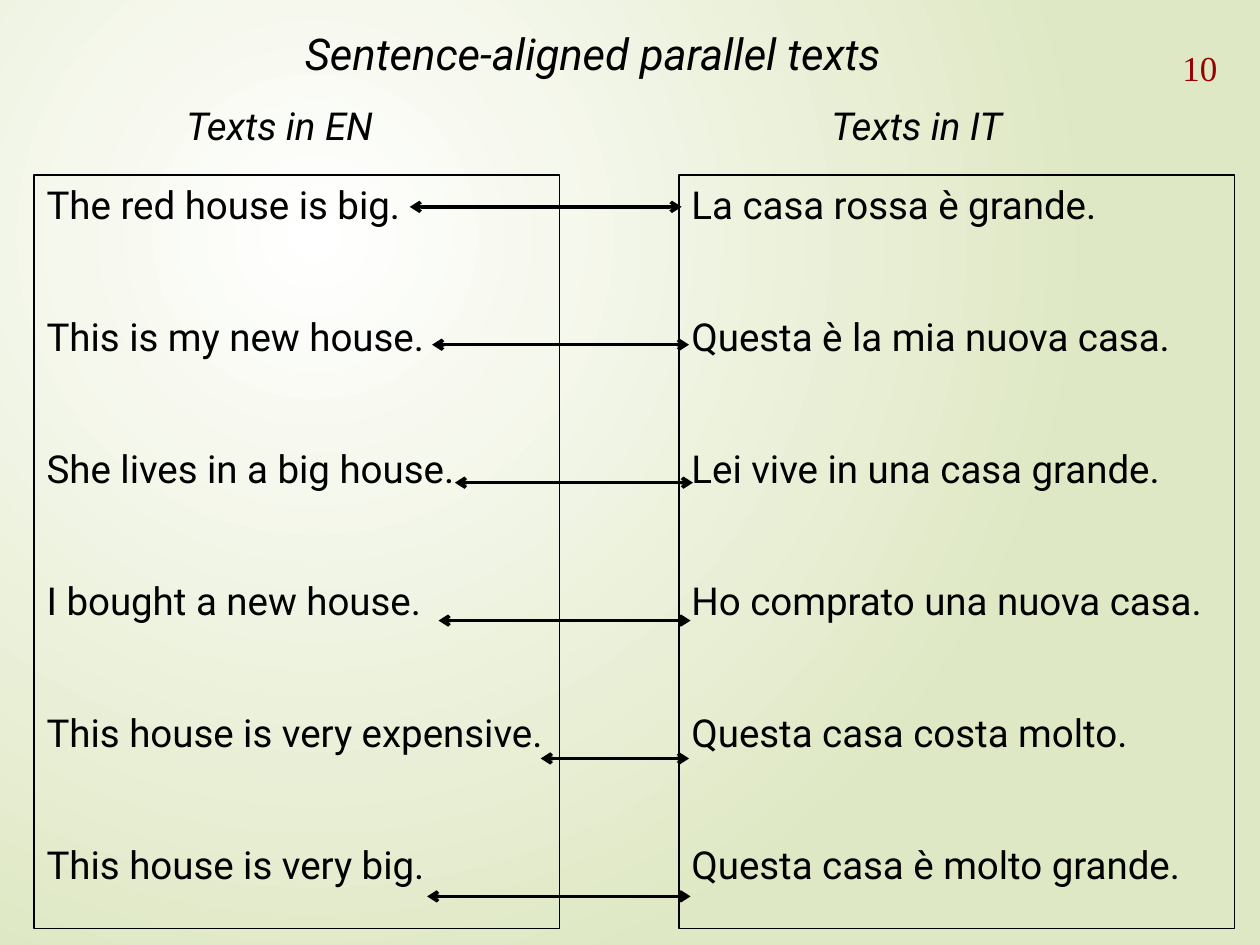
from dataclasses import dataclass

from lxml import etree
from pptx import Presentation
from pptx.dml.color import RGBColor
from pptx.enum.shapes import MSO_CONNECTOR, MSO_SHAPE
from pptx.enum.text import MSO_ANCHOR, PP_ALIGN
from pptx.oxml.ns import qn
from pptx.util import Cm, Pt


@dataclass(frozen=True)
class Theme:
    ink: RGBColor = RGBColor(0, 0, 0)
    number: RGBColor = RGBColor(0x99, 0, 0)
    center: RGBColor = RGBColor(0xFF, 0xFF, 0xFF)
    edge: RGBColor = RGBColor(0xDF, 0xE8, 0xC4)
    font: str = "Roboto"
    number_font: str = "Times New Roman"
    title_size: int = 25
    body_size: int = 22
    number_size: int = 20
    sentence_gap: int = 49


THEME = Theme()
BOX_TOP, BOX_HEIGHT = 3.53, 15.19
HEADING_TOP, HEADING_WIDTH, HEADING_HEIGHT = 1.93, 4.6, 1.19
ARROW_TOP, ARROW_PITCH = 4.17, 2.78

# heading, heading left, box left, box width, sentences
COLUMNS = [
    ("Texts in EN", 3.51, 0.69, 10.59, [
        "The red house is big.",
        "This is my new house.",
        "She lives in a big house.",
        "I bought a new house.",
        "This house is very expensive.",
        "This house is very big.",
    ]),
    ("Texts in IT", 16.51, 13.69, 11.2, [
        "La casa rossa è grande.",
        "Questa è la mia nuova casa.",
        "Lei vive in una casa grande.",
        "Ho comprato una nuova casa.",
        "Questa casa costa molto.",
        "Questa casa è molto grande.",
    ]),
]
ARROW_SPANS = [(8.26, 13.74), (8.71, 13.89), (9.17, 13.97),
               (8.84, 13.92), (10.9, 13.89), (8.61, 13.92)]


def paint_background(s):
    """Radial gradient centred a quarter of the way in from the top left."""
    fill = s.background.fill
    fill.gradient()
    for stop, color in zip(fill.gradient_stops, (THEME.center, THEME.edge)):
        stop.color.rgb = color
    grad = s.element.xpath(".//p:bg//a:gradFill")[0]
    grad.remove(grad.find(qn("a:lin")))
    circle = etree.SubElement(grad, qn("a:path"), path="circle")
    etree.SubElement(circle, qn("a:fillToRect"),
                     l="50000", t="50000", r="100000", b="100000")


def write(tf, lines, size, color=THEME.ink, font=THEME.font, italic=False,
          align=PP_ALIGN.LEFT, gap=0):
    tf.word_wrap = True
    for i, line in enumerate(lines):
        p = tf.add_paragraph() if i else tf.paragraphs[0]
        p.text = line
        p.alignment = align
        p.space_before = Pt(0)
        p.space_after = Pt(gap)
        p.font.name = font
        p.font.size = Pt(size)
        p.font.italic = italic
        p.font.color.rgb = color


def set_title(s, text):
    title = s.shapes.title
    title.left, title.top = Cm(5.89), Cm(0.41)
    title.width, title.height = Cm(13), Cm(1.32)
    title.text_frame.vertical_anchor = MSO_ANCHOR.TOP
    write(title.text_frame, [text], THEME.title_size, italic=True)


def add_page_number(s, text):
    tf = s.shapes.add_textbox(Cm(22.3), Cm(0.71), Cm(2.24), Cm(1.32)).text_frame
    tf.margin_left = tf.margin_right = tf.margin_top = tf.margin_bottom = 0
    tf.vertical_anchor = MSO_ANCHOR.MIDDLE
    write(tf, [text], THEME.number_size, THEME.number, THEME.number_font,
          align=PP_ALIGN.RIGHT)


def add_column(s, heading, heading_left, left, width, sentences):
    label = s.shapes.add_textbox(Cm(heading_left), Cm(HEADING_TOP),
                                 Cm(HEADING_WIDTH), Cm(HEADING_HEIGHT))
    write(label.text_frame, [heading], THEME.body_size, italic=True)

    box = s.shapes.add_shape(MSO_SHAPE.RECTANGLE, Cm(left), Cm(BOX_TOP),
                             Cm(width), Cm(BOX_HEIGHT))
    box.shadow.inherit = False
    box.fill.background()
    box.line.color.rgb = THEME.ink
    box.line.width = Pt(1)
    box.text_frame.vertical_anchor = MSO_ANCHOR.TOP
    write(box.text_frame, sentences, THEME.body_size, gap=THEME.sentence_gap)


def add_double_arrow(s, start, end, y):
    arrow = s.shapes.add_connector(MSO_CONNECTOR.STRAIGHT,
                                   Cm(start), Cm(y), Cm(end), Cm(y))
    arrow.line.color.rgb = THEME.ink
    arrow.line.width = Pt(2)
    ln = arrow.line._get_or_add_ln()
    for tag in ("a:headEnd", "a:tailEnd"):
        etree.SubElement(ln, qn(tag), type="arrow")
    etree.SubElement(arrow.element.spPr, qn("a:effectLst"))


def main():
    prs = Presentation()
    prs.slide_width, prs.slide_height = Cm(25.4), Cm(19.05)
    s = prs.slides.add_slide(prs.slide_layouts[5])
    paint_background(s)
    set_title(s, "Sentence-aligned parallel texts")
    add_page_number(s, "10")
    for column in COLUMNS:
        add_column(s, *column)
    for i, (start, end) in enumerate(ARROW_SPANS):
        add_double_arrow(s, start, end, ARROW_TOP + i * ARROW_PITCH)
    prs.save("out.pptx")


if __name__ == "__main__":
    main()
